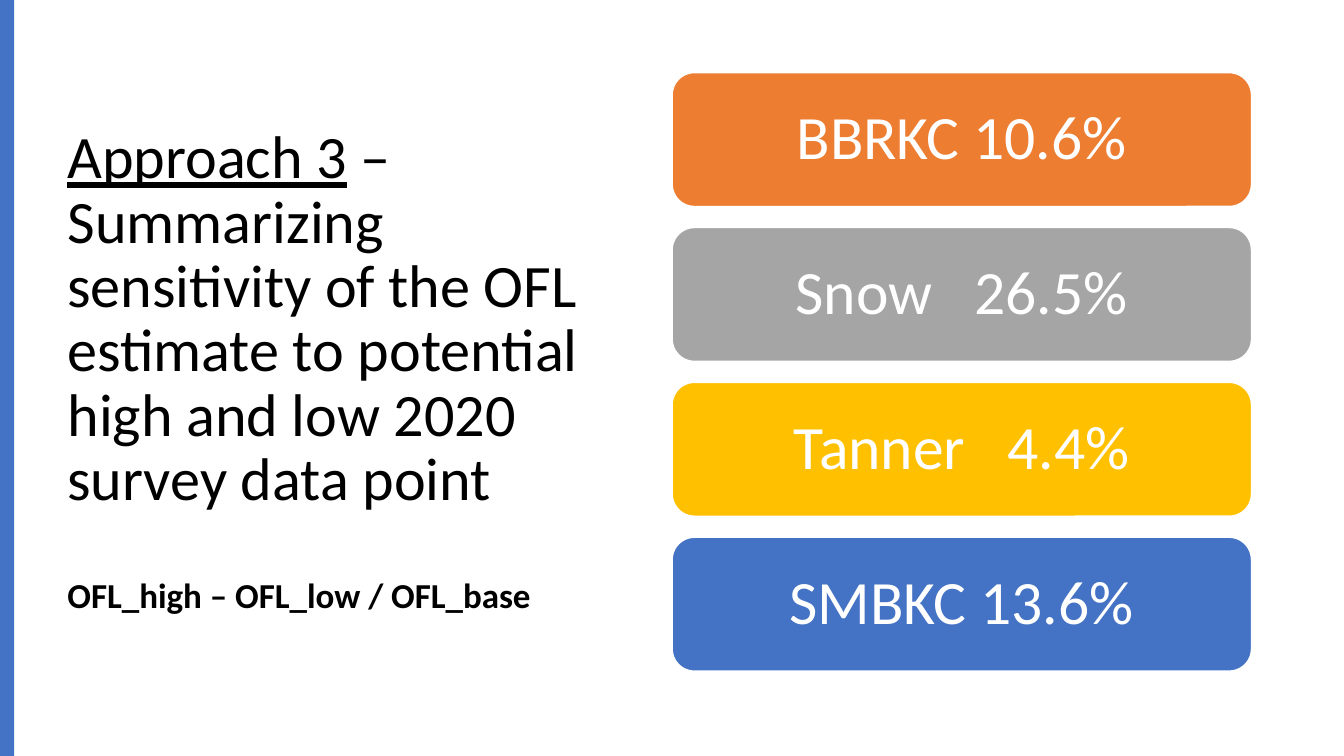
from pptx import Presentation
from pptx.dml.color import RGBColor
from pptx.enum.shapes import MSO_SHAPE as Shape
from pptx.enum.text import MSO_ANCHOR as Anchor, PP_ALIGN as Align
from pptx.util import Cm, Pt

FONT = "Calibri"
BLUE = "4472C4"
WHITE = "FFFFFF"
STOCKS = [
    ("BBRKC", "10.6%", "ED7D31", 0),
    ("Snow", "26.5%", "A5A5A5", 20),
    ("Tanner", "4.4%", "FFC000", 20),
    ("SMBKC", "13.6%", BLUE, 0),
]


def color(value):
    return RGBColor.from_string(value)


def add_span(para, text, size, ink, bold=False, underline=False):
    span = para.add_run()
    span.text = text
    span.font.name = FONT
    span.font.size = Pt(size)
    span.font.color.rgb = color(ink)
    span.font.bold = bold
    span.font.underline = underline
    return span


def add_block(page, kind, left, top, width, height, fill):
    block = page.shapes.add_shape(kind, Cm(left), Cm(top), Cm(width), Cm(height))
    block.shadow.inherit = False
    block.fill.solid()
    block.fill.fore_color.rgb = color(fill)
    block.line.fill.background()
    return block


def add_heading(page, left, top, width, height):
    box = page.shapes.add_textbox(Cm(left), Cm(top), Cm(width), Cm(height))
    frame = box.text_frame
    frame.word_wrap = True
    frame.vertical_anchor = Anchor.MIDDLE

    # Heading
    heading = frame.paragraphs[0]
    heading.line_spacing = 0.89
    add_span(heading, "Approach 3", 43, "000000", underline=True)
    add_span(heading, " – Summarizing sensitivity of the OFL estimate to "
             "potential high and low 2020 survey data point", 43, "000000")

    # Formula
    formula = frame.add_paragraph()
    formula.line_spacing = 0.89
    formula.space_before = Pt(47)
    add_span(formula, "OFL_high – OFL_low / OFL_base", 25, "000000", bold=True)


def add_stock_bars(page, left, top, width, height, gap=0.53):
    bar_height = (height - gap * (len(STOCKS) - 1)) / len(STOCKS)
    for row, (stock, share, fill, tracking) in enumerate(STOCKS):
        bar = add_block(page, Shape.ROUNDED_RECTANGLE, left,
                        top + row * (bar_height + gap), width, bar_height, fill)
        bar.line.color.rgb = color(WHITE)
        bar.line.width = Pt(1)
        frame = bar.text_frame
        frame.word_wrap = True
        frame.vertical_anchor = Anchor.MIDDLE
        para = frame.paragraphs[0]
        para.alignment = Align.CENTER
        para.line_spacing = 0.9
        add_span(para, stock, 44, WHITE)
        space = add_span(para, " ", 44, WHITE)
        if tracking:  # widen the space between name and value
            space.font._element.set("spc", str(tracking * 100))
        add_span(para, share, 44, WHITE)


def main():
    deck = Presentation()
    deck.slide_width, deck.slide_height = Cm(33.87), Cm(19.05)
    page = deck.slides.add_slide(deck.slide_layouts[6])
    add_heading(page, 1.45, 1.73, 14.4, 15.29)
    # Accent strip on the left edge
    add_block(page, Shape.RECTANGLE, 0, 0, 0.36, 19.05, BLUE)
    add_stock_bars(page, 16.94, 1.83, 14.6, 15.08)
    deck.save("out.pptx")


if __name__ == "__main__":
    main()
